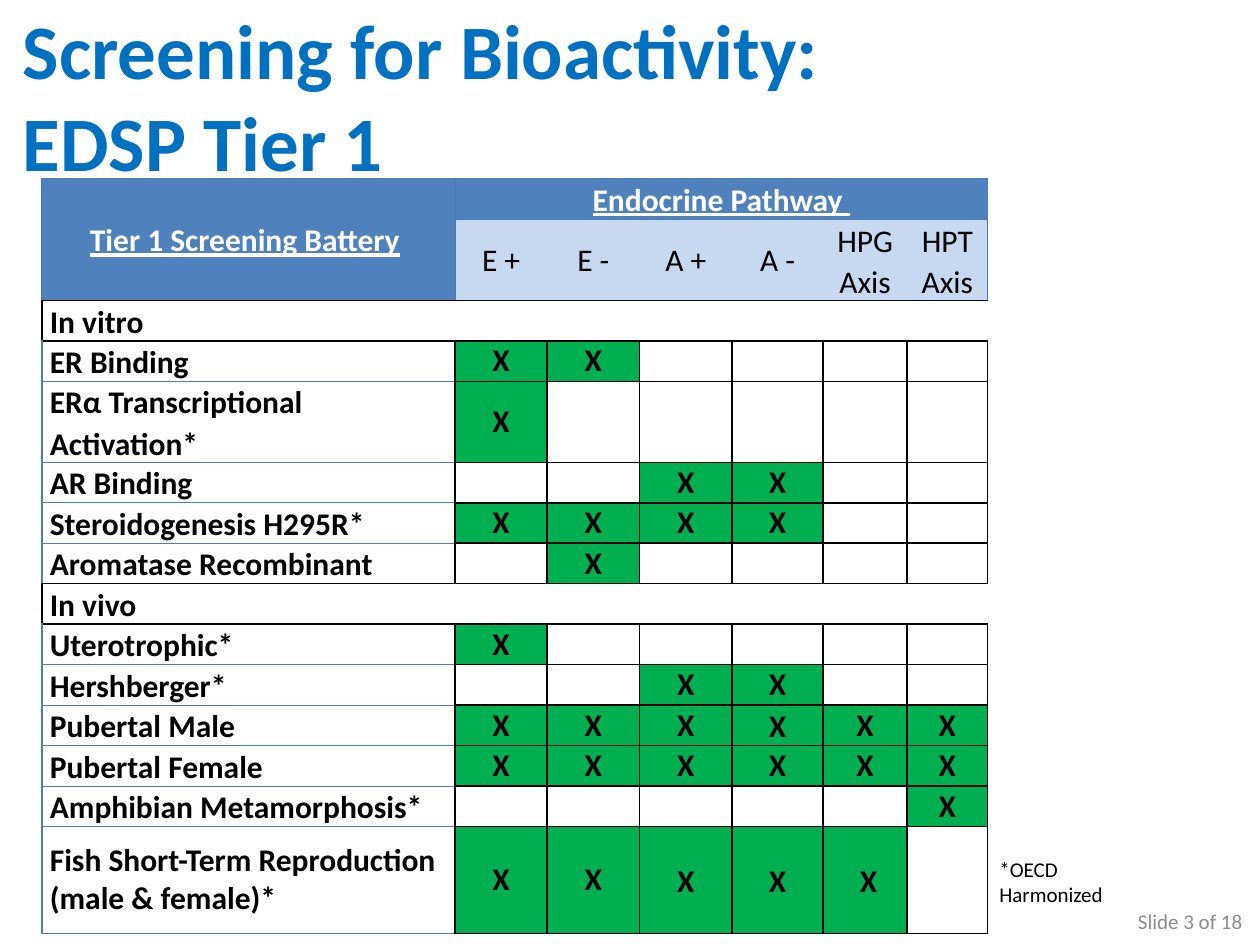
import pptx
import pptx.util
import pptx.dml.color
import pptx.enum.text
import pptx.oxml.ns
import lxml.etree

Pt = pptx.util.Pt
RGBColor = pptx.dml.color.RGBColor
PP_ALIGN = pptx.enum.text.PP_ALIGN
MIDDLE = pptx.enum.text.MSO_ANCHOR.MIDDLE

TITLE_BLUE = RGBColor(0x00, 0x70, 0xC0)
HEADER_BLUE = RGBColor(0x4F, 0x81, 0xBD)
EDGE_BLUE = RGBColor(0x4B, 0x7E, 0xBC)
PALE_BLUE = RGBColor(0xC6, 0xD9, 0xF1)
GREEN = RGBColor(0x00, 0xB0, 0x50)
GRAY = RGBColor(0x8C, 0x8C, 0x8C)
BLACK = RGBColor(0, 0, 0)
WHITE = RGBColor(255, 255, 255)


def add_text(p, text, size, color, bold=False, underline=False):
    for i, line in enumerate(text.split("\n")):
        if i:
            p.add_line_break()
        r = p.add_run()
        r.text = line
        r.font.name = "Calibri"
        r.font.size = Pt(size)
        r.font.bold = bold
        r.font.underline = underline
        r.font.color.rgb = color


def add_border(cell, side, color):
    qn = pptx.oxml.ns.qn
    ln = lxml.etree.SubElement(cell._tc.get_or_add_tcPr(), qn("a:ln" + side))
    if color is None:
        ln.set("w", "0")
        lxml.etree.SubElement(ln, qn("a:noFill"))
    else:
        ln.set("w", str(Pt(1 if color == BLACK else 0.75)))
        fill = lxml.etree.SubElement(ln, qn("a:solidFill"))
        lxml.etree.SubElement(fill, qn("a:srgbClr")).set("val", str(color))


prs = pptx.Presentation()
prs.slide_width, prs.slide_height = Pt(720), Pt(540)
s = prs.slides.add_slide(prs.slide_layouts[6])

labels = [
    ("Screening for Bioactivity: EDSP Tier 1", 6, -2, 474, 114, 44, TITLE_BLUE, True, PP_ALIGN.LEFT),
    ("Slide 3 of 18", 549.5, 512, 167.5, 29, 12, GRAY, False, PP_ALIGN.RIGHT),
    ("*OECD Harmonized", 564, 486, 108, 36, 12, BLACK, False, PP_ALIGN.LEFT),
]
for text, x, y, w, h, size, color, bold, align in labels:
    sp = s.shapes.add_textbox(Pt(x), Pt(y), Pt(w), Pt(h))
    tf = sp.text_frame
    tf.word_wrap = True
    if align == PP_ALIGN.RIGHT:
        tf.vertical_anchor = MIDDLE
    p = tf.paragraphs[0]
    p.alignment = align
    add_text(p, text, size, color, bold)

pathways = ["E +", "E -", "A +", "A -", "HPG\rAxis", "HPT\nAxis"]
assays = [
    ("In vitro", None),
    ("ER Binding", "XX    "),
    ("ERα Transcriptional Activation*", "X     "),
    ("AR Binding", "  XX  "),
    ("Steroidogenesis H295R*", "XXXX  "),
    ("Aromatase Recombinant", " X    "),
    ("In vivo", None),
    ("Uterotrophic*", "X     "),
    ("Hershberger*", "  XX  "),
    ("Pubertal Male", "XXXXXX"),
    ("Pubertal Female", "XXXXXX"),
    ("Amphibian Metamorphosis*", "     X"),
    ("Fish Short-Term Reproduction\n(male & female)*", "XXXXX "),
]
widths = [236, 52.7, 52.7, 53, 52, 48, 46]
heights = [23.15] * 15
heights[1] = heights[4] = 46.3
heights[14] = 61
n_rows, n_cols = len(heights), len(widths)
sections = [i + 2 for i, (name, marks) in enumerate(assays) if marks is None]

frame = s.shapes.add_table(n_rows, n_cols, Pt(24), Pt(102.2), Pt(sum(widths)), Pt(sum(heights)))
tbl = frame.table
tbl.horz_banding = False
for col, w in zip(tbl.columns, widths):
    col.width = Pt(w)
for row, h in zip(tbl.rows, heights):
    row.height = Pt(h)

horizontal, vertical = {}, {}
for i in range(n_rows + 1):
    for j in range(n_cols + 1):
        if i == 1 and j == 0:
            horizontal[i, j] = None
        elif i < 2:
            horizontal[i, j] = EDGE_BLUE
        elif j > 0 or i in sections or i - 1 in sections:
            horizontal[i, j] = BLACK
        else:
            horizontal[i, j] = EDGE_BLUE
        if i < 2:
            vertical[i, j] = EDGE_BLUE if j in (0, 1, n_cols) else None
        elif i in sections:
            vertical[i, j] = BLACK if j in (0, n_cols) else None
        else:
            vertical[i, j] = BLACK if j else EDGE_BLUE

for i in range(n_rows):
    for j in range(n_cols):
        cell = tbl.cell(i, j)
        cell.margin_left = cell.margin_right = Pt(4.5)
        cell.margin_top = cell.margin_bottom = 0
        cell.vertical_anchor = MIDDLE
        add_border(cell, "L", vertical[i, j])
        add_border(cell, "R", vertical[i, j + 1])
        add_border(cell, "T", horizontal[i, j])
        add_border(cell, "B", horizontal[i + 1, j])

        text, fill, color, bold, underline = "", WHITE, BLACK, True, False
        align, spacing = PP_ALIGN.CENTER, 1.07
        if i == 0 or (i == 1 and j == 0):
            fill, color, underline = HEADER_BLUE, WHITE, True
            if i == 0:
                text = {0: "Tier 1 Screening Battery", 1: "Endocrine Pathway "}.get(j, "")
        elif i == 1:
            text, fill, bold = pathways[j - 1], PALE_BLUE, False
        else:
            name, marks = assays[i - 2]
            if j == 0:
                text, align = name, PP_ALIGN.LEFT
                spacing = None if i == n_rows - 1 else 1.07
            elif marks and marks[j - 1] == "X":
                text, fill = "X", GREEN
                spacing = 1.07 if (i, j) in ((11, 4), (14, 3), (14, 4), (14, 5)) else None
                if (i, j) == (14, 5):
                    text = " X"
        cell.fill.solid()
        cell.fill.fore_color.rgb = fill
        tf = cell.text_frame
        for k, part in enumerate(text.split("\r")):
            p = tf.add_paragraph() if k else tf.paragraphs[0]
            p.alignment = align
            p.font.size = Pt(18)
            if text:
                p.line_spacing = spacing
                add_text(p, part, 18, color, bold, underline)
        if i == 0 and j == 0:
            add_text(p, "\u00a0", 18, color, bold)

tbl.cell(0, 0).merge(tbl.cell(1, 0))
tbl.cell(0, 1).merge(tbl.cell(0, n_cols - 1))
for i in sections:
    tbl.cell(i, 0).merge(tbl.cell(i, n_cols - 1))

prs.save("out.pptx")
